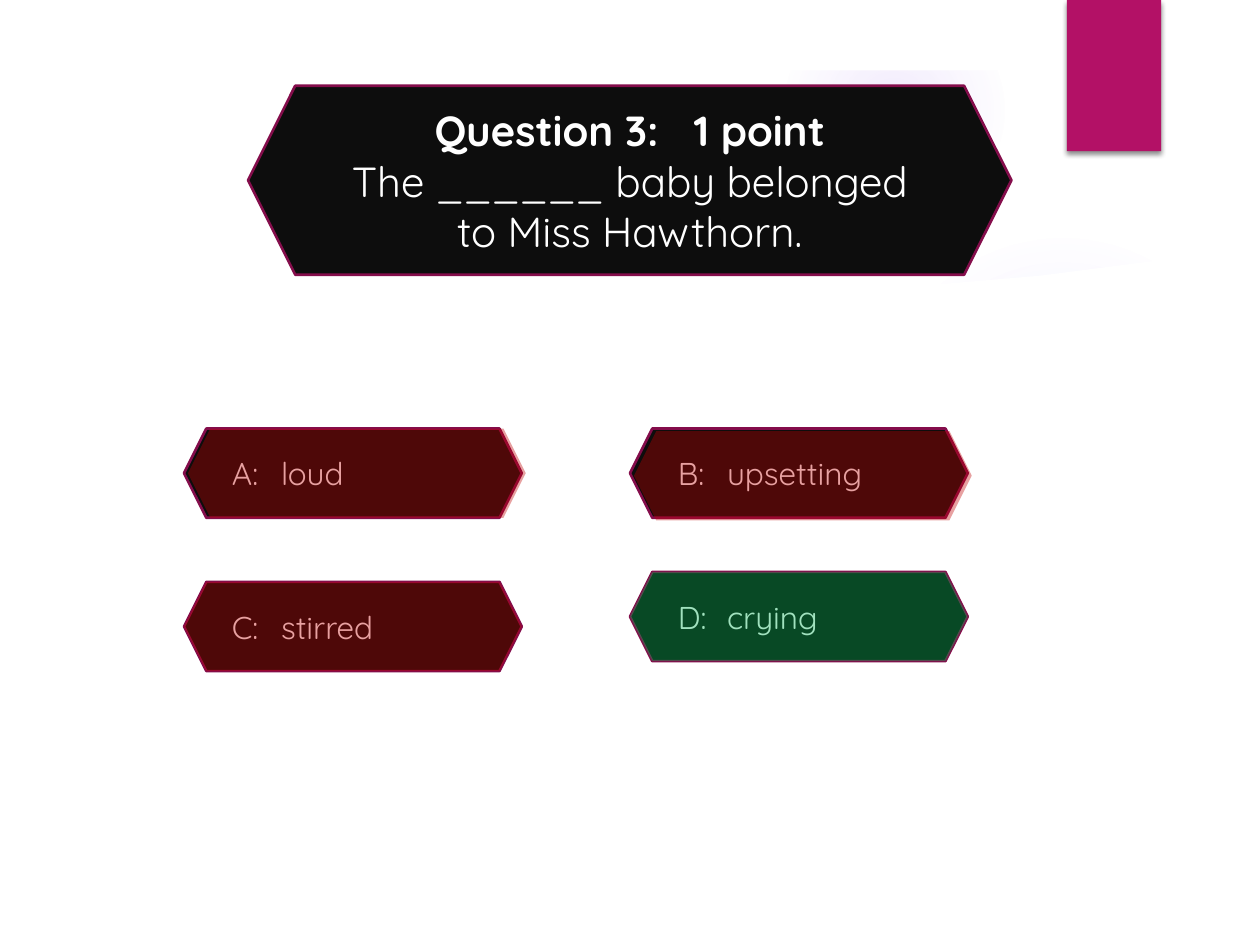
from pptx import Presentation
from pptx import util as u
from pptx.dml.color import RGBColor
from pptx.enum import shapes, text
from pptx.oxml import parse_xml
from pptx.oxml.ns import nsdecls, qn

WHITE = RGBColor(0xFF, 0xFF, 0xFF)
BLACK = RGBColor(0x0D, 0x0D, 0x0D)
BORDER = RGBColor(0x84, 0x0D, 0x4B)
MAGENTA = RGBColor(0xB3, 0x11, 0x66)
VIOLET = RGBColor(0x9B, 0x6B, 0xF2)
GREEN = RGBColor(0x00, 0xB0, 0x50)
RED = RGBColor(0xC0, 0x00, 0x00)

SLIDE_SIZE = (25.4, 19.05)
ANSWER_SIZE = (6.81, 1.8)
FRAME_WIDTH = 1.42
TINT = 37  # opacity of the answer tints, percent
Kind = shapes.MSO_SHAPE

# Label, answer, left, top, tint colour, tint offset
ANSWERS = [
    ("D", "crying", 12.7, 11.53, GREEN, (0, 0)),
    ("C", "stirred", 3.71, 11.73, RED, (0, 0)),
    ("B", "upsetting", 12.7, 8.64, RED, (0.08, 0.05)),
    ("A", "loud", 3.71, 8.64, RED, (0.08, 0)),
]

# Left, top, diameter, then (position, opacity) stops in percent
GLOWS = [
    (17.5, 4.65, 7.82, [(0, 7), (36, 6), (69, 0)]),
    (15.8, 0, 4.45, [(0, 14), (36, 7), (73, 0)]),
]

PANEL = [(1.35, 5.16), (3.35, 5.41), (7.04, 5.74), (11.15, 5.94),
         (14.91, 5.94), (17.88, 5.82), (20.96, 5.56), (24.05, 5.16),
         (24.05, 17.75), (1.35, 17.75)]
WEDGE = [(17.75, 5.94), (20.5, 5.75), (24.28, 5.28), (24.16, 4.42),
         (21.8, 5.11), (19.74, 5.56), (17.68, 5.82)]


def paint(shape, color, opacity=100, border=None):
    """Give a shape a flat fill, an optional border and no shadow."""
    shape.shadow.inherit = False
    shape.fill.solid()
    shape.fill.fore_color.rgb = color
    if opacity < 100:
        tone = shape.fill._xPr.find(qn("a:solidFill"))[0]
        tone.append(parse_xml(
            f'<a:alpha {nsdecls("a")} val="{opacity * 1000}"/>'))
    if border is None:
        shape.line.fill.background()
    else:
        shape.line.color.rgb = border
        shape.line.width = u.Pt(1.5)


def add_block(page, kind, left, top, width, height, color, **style):
    box = page.shapes.add_shape(
        kind, *(u.Cm(value) for value in (left, top, width, height)))
    paint(box, color, **style)
    return box


def add_outline(page, points, color, opacity=100):
    corners = [(u.Cm(x), u.Cm(y)) for x, y in points]
    builder = page.shapes.build_freeform(*corners[0])
    builder.add_line_segments(corners[1:], close=True)
    outline = builder.convert_to_shape()
    paint(outline, color, opacity)
    return outline


def add_glow(page, left, top, diameter, stops):
    glow = add_block(page, Kind.OVAL, left, top, diameter, diameter, VIOLET)
    stop_xml = "".join(
        f'<a:gs pos="{position * 1000}"><a:srgbClr val="{VIOLET}">'
        f'<a:alpha val="{opacity * 1000}"/></a:srgbClr></a:gs>'
        for position, opacity in stops)
    gradient = parse_xml(
        f'<a:gradFill {nsdecls("a")}><a:gsLst>{stop_xml}</a:gsLst>'
        '<a:path path="circle"><a:fillToRect l="50000" t="50000" '
        'r="50000" b="50000"/></a:path></a:gradFill>')
    properties = glow.fill._xPr
    properties.replace(properties.find(qn("a:solidFill")), gradient)


def add_shadow(shape):
    effects = shape.fill._xPr.find(qn("a:effectLst"))
    effects.append(parse_xml(
        f'<a:outerShdw {nsdecls("a")} blurRad="{u.Pt(3)}" dist="{u.Pt(2)}" '
        'dir="5400000" rotWithShape="0"><a:srgbClr val="000000">'
        '<a:alpha val="45000"/></a:srgbClr></a:outerShdw>'))


def write(para, words, align, **font):
    para.alignment = align
    span = para.add_run()
    span.text = words
    look = {"name": "Quicksand", **font}
    for name, value in look.items():
        setattr(span.font, name, value)
    span.font.color.rgb = WHITE


def add_background(page):
    for glow in GLOWS:
        add_glow(page, *glow)
    add_outline(page, WEDGE, WHITE, 20).rotation = 350.2
    add_outline(page, PANEL, WHITE)
    frame = add_block(page, Kind.FRAME, 0, 0, *SLIDE_SIZE, WHITE)
    frame.adjustments[0] = FRAME_WIDTH / SLIDE_SIZE[1]
    add_shadow(add_block(page, Kind.RECTANGLE, 21.51, 0, 1.9, 3.05, MAGENTA))


def add_answer(page, label, answer, left, top):
    box = add_block(page, Kind.HEXAGON, left, top, *ANSWER_SIZE, BLACK,
                    border=BORDER)
    box.text_frame.vertical_anchor = text.MSO_ANCHOR.MIDDLE
    para = box.text_frame.paragraphs[0]
    para._p.get_or_add_pPr().append(parse_xml(
        f'<a:tabLst {nsdecls("a")}><a:tab pos="{u.Cm(0.99)}" algn="l"/>'
        '</a:tabLst>'))
    write(para, f"{label}:\t{answer}", text.PP_ALIGN.LEFT, size=u.Pt(18))


def add_question(page):
    box = add_block(page, Kind.HEXAGON, 5, 1.73, 15.39, 3.81, BLACK,
                    border=BORDER)
    frame = box.text_frame
    frame.vertical_anchor = text.MSO_ANCHOR.MIDDLE
    center = text.PP_ALIGN.CENTER
    write(frame.paragraphs[0], "Question 3:   1 point", center,
          size=u.Pt(24), bold=True)
    write(frame.add_paragraph(), "The ______ baby belonged to Miss Hawthorn.",
          center, size=u.Pt(24), bold=False)


def main():
    deck = Presentation()
    deck.slide_width, deck.slide_height = (u.Cm(side) for side in SLIDE_SIZE)
    page = deck.slides.add_slide(deck.slide_layouts[6])
    add_background(page)
    # Answers and question
    for label, answer, left, top, _, _ in ANSWERS:
        add_answer(page, label, answer, left, top)
    add_question(page)
    # Right and wrong tints over the answers
    for _, _, left, top, color, (right, down) in ANSWERS:
        add_block(page, Kind.HEXAGON, left + right, top + down, *ANSWER_SIZE,
                  color, opacity=TINT)
    deck.save("out.pptx")


if __name__ == "__main__":
    main()
